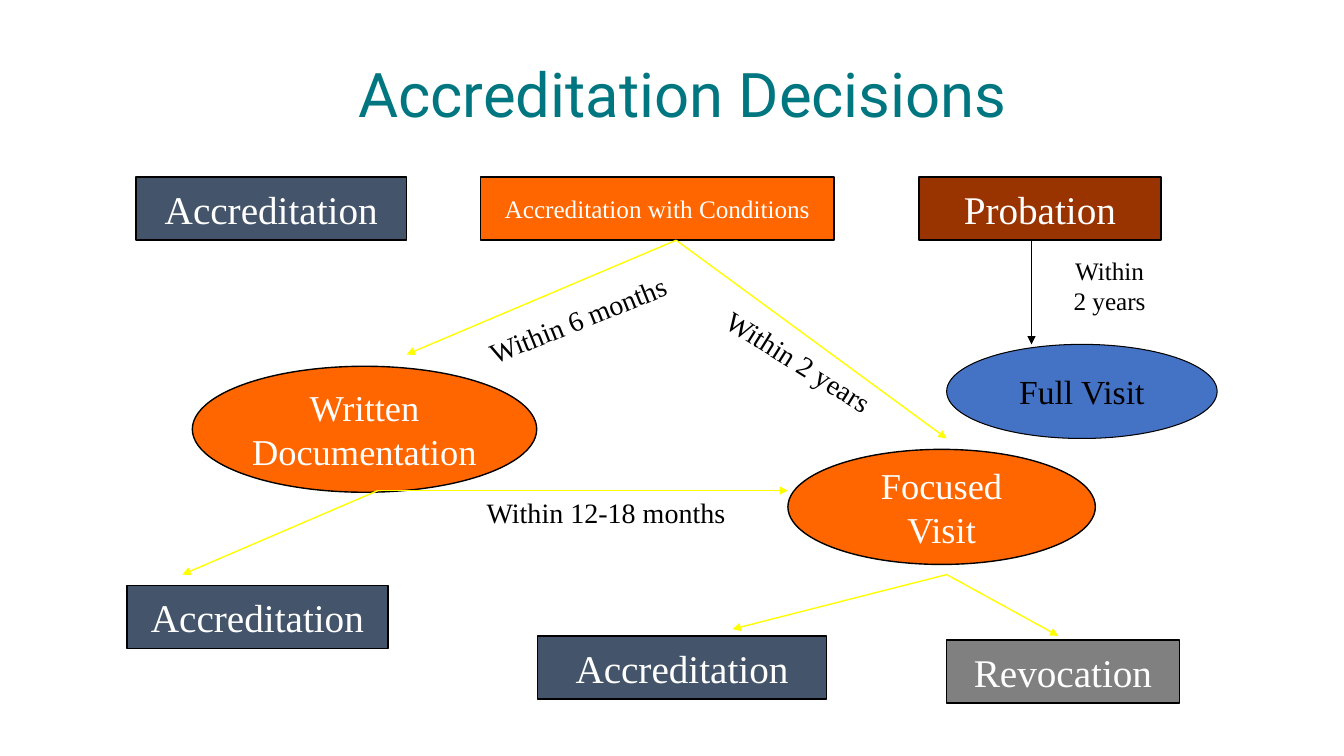
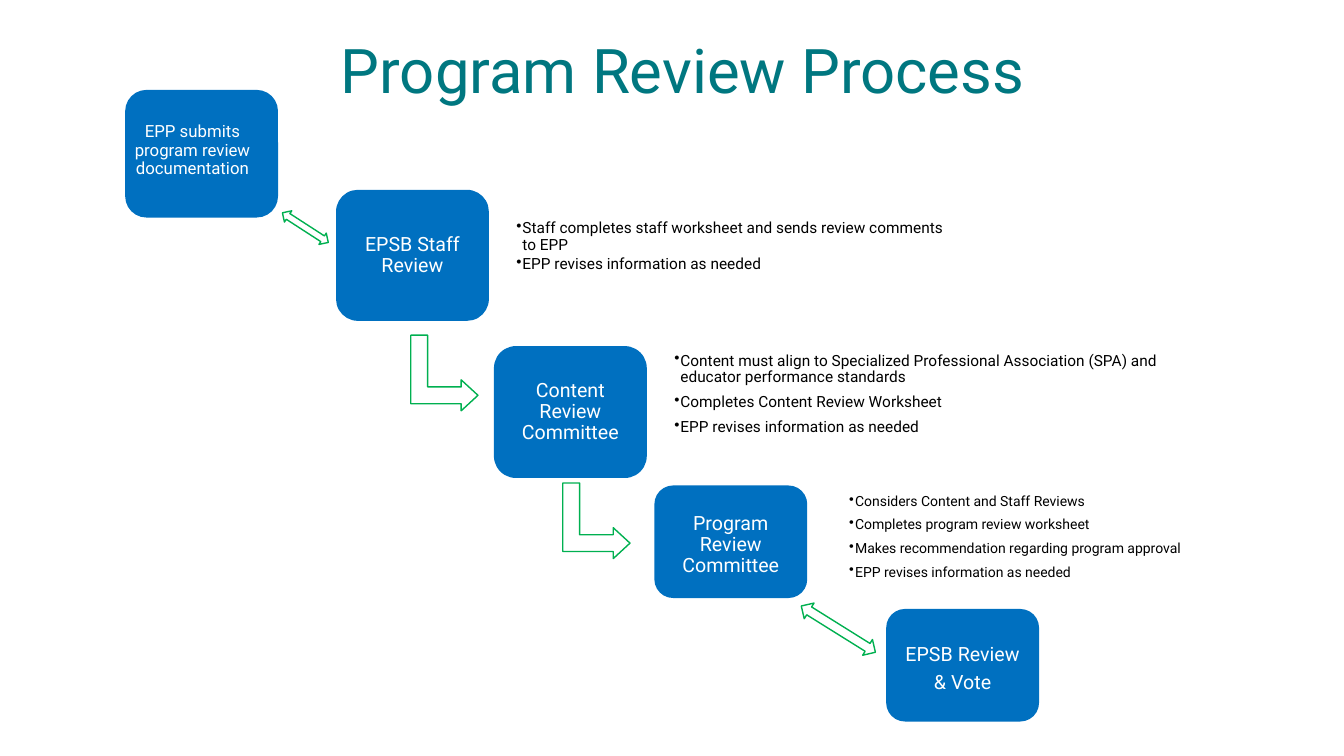
from dataclasses import dataclass

from lxml import etree
from pptx import Presentation
from pptx.dml.color import RGBColor
from pptx.enum.shapes import MSO_CONNECTOR, MSO_SHAPE
from pptx.enum.text import MSO_ANCHOR, PP_ALIGN
from pptx.oxml.ns import qn
from pptx.util import Inches, Pt

RECTANGLE = MSO_SHAPE.RECTANGLE
OVAL = MSO_SHAPE.OVAL
ROUNDED = MSO_SHAPE.ROUNDED_RECTANGLE
DOUBLE_ARROW = MSO_SHAPE.LEFT_RIGHT_ARROW
BENT_ARROW = MSO_SHAPE.BENT_UP_ARROW
STRAIGHT = MSO_CONNECTOR.STRAIGHT
CENTER, LEFT = PP_ALIGN.CENTER, PP_ALIGN.LEFT
MIDDLE, TOP = MSO_ANCHOR.MIDDLE, MSO_ANCHOR.TOP


@dataclass(frozen=True)
class Theme:
    teal: str = "007780"
    slate: str = "44546A"
    orange: str = "FF6600"
    brown: str = "993300"
    gray: str = "808080"
    blue: str = "4472C4"
    step: str = "0070C0"
    green: str = "00B050"
    yellow: str = "FFFF00"
    black: str = "000000"
    white: str = "FFFFFF"
    sans: str = "Roboto"
    serif: str = "Times New Roman"
    title: int = 44
    box: int = 28
    oval: int = 26
    visit: int = 24
    label: int = 20
    small: int = 18


THEME = Theme()
WIDTH, HEIGHT = Inches(13.33), Inches(7.5)
COLUMNS, ROWS = 160, 90
BOX_ROWS, LABEL_ROWS, STEP_COLUMNS = 7.5, 5.3, 18.2
TITLE_LEFT, TITLE_COLUMNS, TITLE_ROWS = 12.3, 138, 17.4

DECISIONS = [
    (RECTANGLE, (16.2, 21.1, 32.2, BOX_ROWS), ["Accreditation"], THEME.slate, THEME.box),
    (RECTANGLE, (57.2, 21.1, 42.1, BOX_ROWS), ["Accreditation with Conditions"], THEME.orange, THEME.small),
    (RECTANGLE, (109.4, 21.1, 28.8, BOX_ROWS), ["Probation"], THEME.brown, THEME.box),
    (OVAL, (22.9, 43.6, 41, 15), ["Written", "Documentation"], THEME.orange, THEME.oval),
    (OVAL, (93.8, 53.5, 36.6, 13.7), ["Focused", "Visit"], THEME.orange, THEME.oval),
    (RECTANGLE, (64, 75.7, 34.4, BOX_ROWS), ["Accreditation"], THEME.slate, THEME.box),
    (RECTANGLE, (112.7, 76.2, 27.7, BOX_ROWS), ["Revocation"], THEME.gray, THEME.box),
    (RECTANGLE, (15.1, 69.7, 31.1, BOX_ROWS), ["Accreditation"], THEME.slate, THEME.box),
]
FULL_VISIT = (OVAL, (112.7, 41, 32.2, 11.2), ["Full Visit"], THEME.blue, THEME.visit)

CONDITIONS, FOCUSED, WRITTEN = (80.5, 28.6), (112.7, 68.4), (45, 58.4)
BRANCHES = [
    (CONDITIONS, (48.4, 42.2)),
    (CONDITIONS, (112.7, 52.2)),
    (FOCUSED, (87.2, 74.9)),
    (FOCUSED, (126, 75.7)),
    (WRITTEN, (21.7, 68.4)),
    (WRITTEN, (93.8, 58.4)),
]
PROBATION_BRANCH = ((122.8, 28.6), (122.8, 41))

DEADLINES = [
    ((56.4, 35.4, 24.8, LABEL_ROWS), ["Within 6 months"], THEME.label, 338.2),
    ((84, 40.4, 22.1, LABEL_ROWS), ["Within 2 years"], THEME.label, 32.2),
    ((56.6, 58.4, 31.1, LABEL_ROWS), ["Within 12-18 months"], THEME.label, 0),
    ((126.6, 29.8, 11, 8.5), ["Within", "2 years"], THEME.small, 0),
]

EVEN = (0.03, 0.03, 0.03, 0.03)
STEPS = [
    ((14.9, 10.7), 15.2, ["EPP submits program review documentation"], 12, (0, 0.03, 0.18, 0.09)),
    ((40, 22.6), 15.6, ["EPSB Staff Review"], 14, EVEN),
    ((58.8, 41.2), 15.7, ["Content Review Committee"], 14, EVEN),
    ((77.9, 57.8), 13.4, ["Program Review Committee"], 14, (0.03, 0.1, 0.03, 0.03)),
    ((105.5, 72.5), 13.4, ["EPSB Review", "& Vote"], 14, (0.03, 0.1, 0.03, 0.03)),
]

NOTES = [
    ((61, 23.9, 52, 11), 11, 2, [
        "Staff completes staff worksheet and sends review comments to EPP",
        "EPP revises information as needed",
    ]),
    ((79.8, 38.6, 63.4, 16.7), 11, 6, [
        "Content must align to Specialized Professional Association (SPA) and "
        "educator performance standards",
        "Completes Content Review Worksheet",
        "EPP revises information as needed",
    ]),
    ((100.6, 57, 55.9, 13.9), 10, 6, [
        "Considers Content and Staff Reviews",
        "Completes program review worksheet",
        "Makes recommendation regarding program approval",
        "EPP revises information as needed",
    ]),
]

ARROWS = [
    (DOUBLE_ARROW, (33.1, 26.3, 6.5, 1.6), 32.9, ()),
    (BENT_ARROW, (48.4, 40.4, 9, 8), 90, (0.25, 0.23, 0.25)),
    (BENT_ARROW, (66.5, 58, 9, 8), 90, (0.25, 0.23, 0.25)),
    (DOUBLE_ARROW, (94.6, 73.8, 10.4, 2.2), 32, ()),
]


def point(column, row):
    return round(WIDTH * column / COLUMNS), round(HEIGHT * row / ROWS)


def area(cells):
    return *point(*cells[:2]), *point(*cells[2:])


def write(box, lines, *, size, color, font=THEME.sans, align=CENTER, anchor=MIDDLE,
          wrap=True, margins=None, spacing=None, after=None, bullet=False):
    frame = box.text_frame
    frame.word_wrap = wrap
    frame.vertical_anchor = anchor
    if margins:
        (frame.margin_left, frame.margin_top,
         frame.margin_right, frame.margin_bottom) = map(Inches, margins)
    for index, line in enumerate(lines):
        para = frame.add_paragraph() if index else frame.paragraphs[0]
        if bullet:
            properties = para._p.get_or_add_pPr()
            indent = Inches(0.06)
            properties.set("marL", str(indent))
            properties.set("indent", str(-indent))
            etree.SubElement(properties, qn("a:buChar")).set("char", "•")
        para.alignment = align
        if spacing:
            para.line_spacing = spacing
        if after:
            para.space_after = Pt(after)
        span = para.add_run()
        span.text = line
        span.font.name = font
        span.font.size = Pt(size)
        span.font.color.rgb = RGBColor.from_string(color)


def add_box(page, kind, cells, *, fill=None, line=None, width=1):
    box = page.shapes.add_shape(kind, *area(cells))
    box.shadow.inherit = False
    if fill:
        box.fill.solid()
        box.fill.fore_color.rgb = RGBColor.from_string(fill)
    else:
        box.fill.background()
    if line:
        box.line.color.rgb = RGBColor.from_string(line)
        box.line.width = Pt(width)
    else:
        box.line.fill.background()
    return box


def add_label(page, cells, lines, *, rotation=0, **format):
    label = page.shapes.add_textbox(*area(cells))
    label.rotation = rotation
    write(label, lines, **format)


def add_branch(page, start, end, color, width):
    branch = page.shapes.add_connector(STRAIGHT, *point(*start), *point(*end))
    branch.line.color.rgb = RGBColor.from_string(color)
    branch.line.width = Pt(width)
    properties = branch._element.spPr
    etree.SubElement(properties.find(qn("a:ln")), qn("a:tailEnd")).set("type", "triangle")
    etree.SubElement(properties, qn("a:effectLst"))


def add_page(deck, title, title_row):
    page = deck.slides.add_slide(deck.slide_layouts[6])
    add_label(page, (TITLE_LEFT, title_row, TITLE_COLUMNS, TITLE_ROWS), [title],
              size=THEME.title, color=THEME.teal, spacing=0.9)
    return page


def add_decision(page, decision, color, width):
    kind, cells, lines, fill, size = decision
    box = add_box(page, kind, cells, fill=fill, line=THEME.black, width=width)
    write(box, lines, size=size, color=color, font=THEME.serif, wrap=False)


def build_decisions(deck):
    page = add_page(deck, "Accreditation Decisions", 2.9)
    for decision in DECISIONS:
        add_decision(page, decision, THEME.white, 1)
    for start, end in BRANCHES:
        add_branch(page, start, end, THEME.yellow, 1)
    for cells, lines, size, rotation in DEADLINES:
        add_label(page, cells, lines, rotation=rotation, size=size, color=THEME.black,
                  font=THEME.serif, anchor=TOP, wrap=False)
    add_branch(page, *PROBATION_BRANCH, THEME.black, 0.75)
    add_decision(page, FULL_VISIT, THEME.black, 0.75)


def build_process(deck):
    page = add_page(deck, "Program Review Process", 0.1)
    for corner, rows, lines, size, margins in STEPS:
        step = add_box(page, ROUNDED, (*corner, STEP_COLUMNS, rows), fill=THEME.step)
        write(step, lines, size=size, color=THEME.white, margins=margins,
              spacing=0.9, after=size * 0.35)
    for cells, size, after, lines in NOTES:
        add_label(page, cells, lines, size=size, color=THEME.black, align=LEFT,
                  margins=(0.04,) * 4, spacing=0.9, after=after, bullet=True)
    for kind, cells, rotation, adjustments in ARROWS:
        arrow = add_box(page, kind, cells, line=THEME.green)
        arrow.rotation = rotation
        for index, value in enumerate(adjustments):
            arrow.adjustments[index] = value


def main():
    deck = Presentation()
    deck.slide_width, deck.slide_height = WIDTH, HEIGHT
    build_decisions(deck)
    build_process(deck)
    deck.save("out.pptx")


if __name__ == "__main__":
    main()
